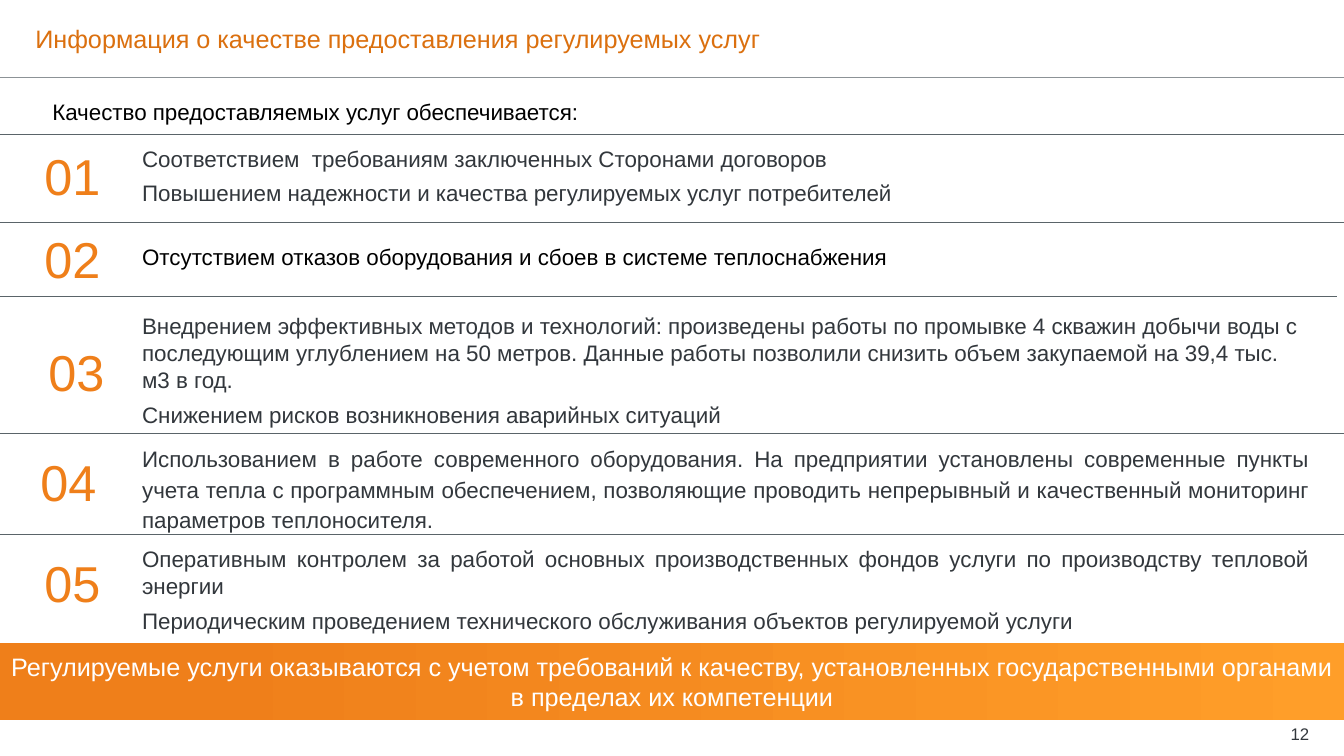
"""Builds a slide on how the quality of regulated services is ensured."""
from pptx import Presentation
from pptx.dml.color import RGBColor
from pptx.enum import shapes, text
from pptx.oxml import ns, xmlchemy
from pptx.util import Pt

ORANGE = RGBColor(0xEF, 0x7F, 0x1A)
LIGHT_ORANGE = RGBColor(0xFF, 0x9E, 0x29)
TITLE_ORANGE = RGBColor(0xDB, 0x70, 0x0F)
DARK = RGBColor(0x32, 0x37, 0x3C)
BLACK = RGBColor(0, 0, 0)
WHITE = RGBColor(0xFF, 0xFF, 0xFF)
RULE = RGBColor(0x5A, 0x64, 0x69)
HEADER_RULE = RGBColor(0x8C, 0x92, 0x96)
FONT = "Arial"
LEFT, JUSTIFY = text.PP_ALIGN.LEFT, text.PP_ALIGN.JUSTIFY
CENTER, RIGHT = text.PP_ALIGN.CENTER, text.PP_ALIGN.RIGHT
WIDTH, HEIGHT = 960, 540
ITEM_LEFT, ITEM_WIDTH = 101.5, 833.8

TITLE = "Информация о качестве предоставления регулируемых услуг"
INTRO = "Качество предоставляемых услуг обеспечивается:"
SUMMARY = ("Регулируемые услуги оказываются с учетом требований к качеству, "
           "установленных государственными органами в пределах их компетенции")
PAGE = "12"

# rule left, rule top, number left, number top, text top, height, colour, alignment, line spacing, before, paragraphs
ITEMS = [
    (0, 95.8, 31.7, 108.7, 100.8, 58, DARK, JUSTIFY, 1.14, 0, [
        "Соответствием  требованиям заключенных Сторонами договоров",
        "Повышением надежности и качества регулируемых услуг потребителей"]),
    (0, 159.1, 31.7, 167.8, 173.5, 36, BLACK, JUSTIFY, 1, 0, [
        "Отсутствием отказов оборудования и сбоев в системе теплоснабжения"]),
    (-5, 211.7, 34.6, 248.4, 223.2, 76, DARK, LEFT, 1, 3, [
        "Внедрением эффективных методов и технологий: произведены работы по промывке "
        "4 скважин добычи воды с последующим углублением на 50 метров. Данные работы "
        "позволили снизить объем закупаемой на 39,4 тыс. м3 в год.",
        "Снижением рисков возникновения аварийных ситуаций"]),
    (0, 309.6, 28.8, 326.9, 315.4, 58, DARK, JUSTIFY, 1.14, 0, [
        "Использованием в работе современного оборудования. На предприятии установлены "
        "современные пункты учета тепла с программным обеспечением, позволяющие проводить "
        "непрерывный и качественный мониторинг параметров теплоносителя."]),
    (0, 381.6, 31.7, 399.6, 389.5, 28, DARK, JUSTIFY, 1, 3, [
        "Оперативным контролем за работой основных производственных фондов услуги "
        "по производству тепловой энергии",
        "Периодическим проведением технического обслуживания объектов регулируемой услуги"]),
]


def write(shape, paragraphs, size, color, align=LEFT, anchor=text.MSO_ANCHOR.TOP,
          spacing=1, before=0, after=0, inset=0):
    frame = shape.text_frame
    frame.word_wrap = True
    frame.auto_size = text.MSO_AUTO_SIZE.NONE
    frame.vertical_anchor = anchor
    frame.margin_left = frame.margin_right = Pt(inset)
    frame.margin_top = frame.margin_bottom = Pt(inset / 2)
    for index, content in enumerate(paragraphs):
        paragraph = frame.add_paragraph() if index else frame.paragraphs[0]
        paragraph.alignment = align
        paragraph.line_spacing = spacing
        paragraph.space_before = Pt(before if index else 0)
        paragraph.space_after = Pt(after)
        run = paragraph.add_run()
        run.text = content
        run.font.name = FONT
        run.font.size = Pt(size)
        run.font.color.rgb = color


def add_text(slide, left, top, width, height, paragraphs, size, color, **style):
    box = slide.shapes.add_textbox(Pt(left), Pt(top), Pt(width), Pt(height))
    write(box, paragraphs, size, color, **style)


def add_rule(slide, left, top, color):
    rule = slide.shapes.add_connector(
        shapes.MSO_CONNECTOR.STRAIGHT, Pt(left), Pt(top), Pt(left + WIDTH), Pt(top))
    rule.line.color.rgb = color
    rule.line.width = Pt(0.75)
    properties = rule._element.spPr
    properties.append(xmlchemy.OxmlElement("a:effectLst"))


def add_summary(slide):
    band = slide.shapes.add_shape(
        shapes.MSO_SHAPE.RECTANGLE, 0, Pt(459.4), Pt(WIDTH), Pt(54.7))
    band.shadow.inherit = False
    band.line.fill.background()
    band.fill.gradient()
    band.fill.gradient_angle = 0
    stops = [(0.15, ORANGE), (1, LIGHT_ORANGE)]
    for stop, (position, color) in zip(band.fill.gradient_stops, stops):
        stop.position = position
        stop.color.rgb = color
    write(band, [SUMMARY], 18, WHITE, align=CENTER,
          anchor=text.MSO_ANCHOR.MIDDLE, inset=7.2)


def main():
    presentation = Presentation()
    presentation.slide_width, presentation.slide_height = Pt(WIDTH), Pt(HEIGHT)
    slide = presentation.slides.add_slide(presentation.slide_layouts[5])
    title = slide.shapes.title
    title.left, title.top, title.width, title.height = Pt(25.2), Pt(0), Pt(756.7), Pt(55.4)
    write(title, [TITLE], 18, TITLE_ORANGE, anchor=text.MSO_ANCHOR.MIDDLE)
    add_rule(slide, 0, 55.4, HEADER_RULE)
    add_text(slide, 37.4, 69.8, 611.3, 19.4, [INTRO], 16, BLACK)
    for number, item in enumerate(ITEMS, 1):
        (rule_left, rule_top, number_left, number_top, top, height,
         color, align, spacing, before, paragraphs) = item
        add_rule(slide, rule_left, rule_top, RULE)
        add_text(slide, number_left, number_top, 42.5, 39.6, [f"{number:02}"], 36, ORANGE,
                 spacing=0.9)
        add_text(slide, ITEM_LEFT, top, ITEM_WIDTH, height, paragraphs, 16, color,
                 align=align, spacing=spacing, before=before, after=3)
    add_summary(slide)
    add_text(slide, 899.3, 514.8, 36, 18, [PAGE], 12, DARK,
             align=RIGHT, anchor=text.MSO_ANCHOR.MIDDLE)
    presentation.save("out.pptx")


if __name__ == "__main__":
    main()
